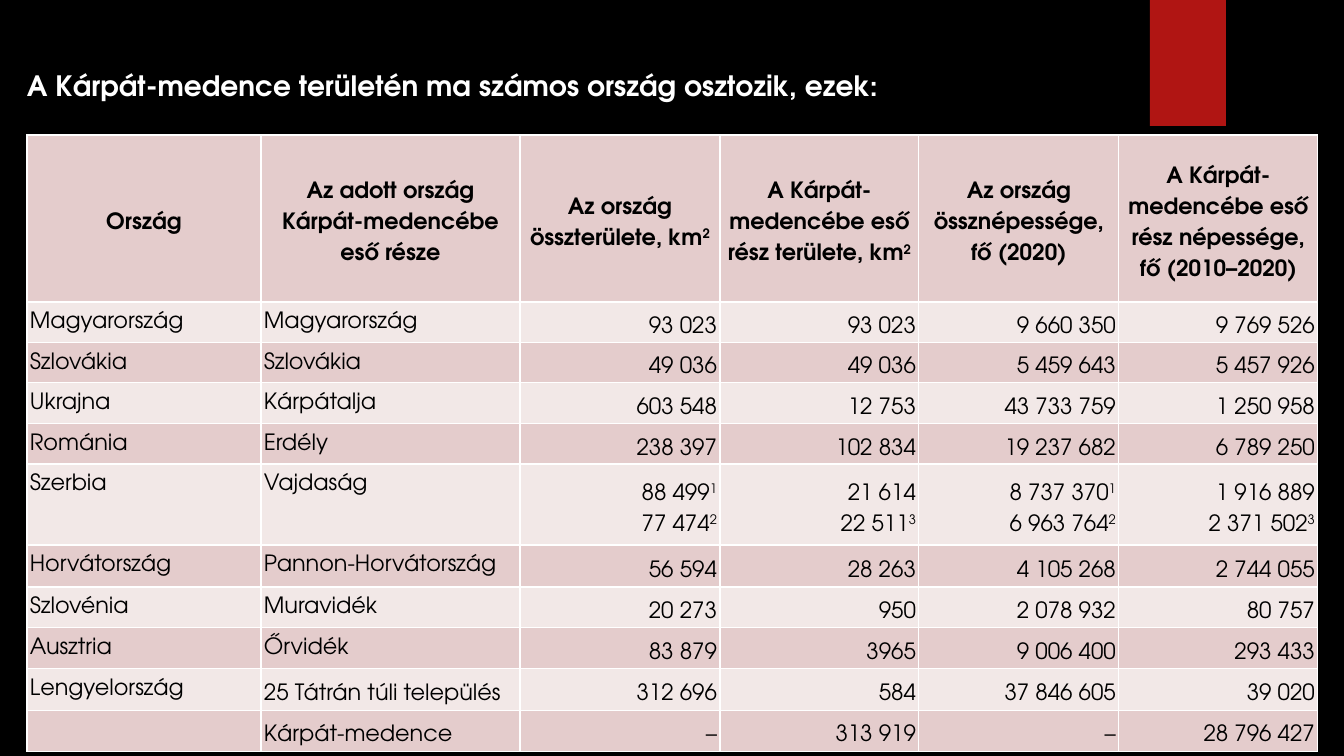
from lxml import etree
from pptx import Presentation
from pptx import util as u
from pptx.dml import color
from pptx.enum import shapes, text
from pptx.oxml import ns

WHITE, BLACK, RED = "FFFFFF", "000000", "B01513"
DARK_BAND, LIGHT_BAND = "E4CCCC", "F2E8E7"
PX = 12192000 / 1344

COLUMN_WIDTHS = [234, 259, 200, 199, 200, 199]
ROW_HEIGHTS = [167, 40, 40, 41, 40, 81, 42, 40, 41, 42, 41]

# "^" raises the rest of a line; a line break starts a new paragraph.
COUNTRIES = [
    ["Ország", "Az adott ország Kárpát-medencébe eső része",
     "Az ország összterülete, km^2",
     "A Kárpát-medencébe eső rész területe, km^2",
     "Az ország össznépessége, fő (2020)",
     "A Kárpát-medencébe eső rész népessége, fő (2010–2020)"],
    ["Magyarország", "Magyarország", "93 023", "93 023", "9 660 350", "9 769 526"],
    ["Szlovákia", "Szlovákia", "49 036", "49 036", "5 459 643", "5 457 926"],
    ["Ukrajna", "Kárpátalja", "603 548", "12 753", "43 733 759", "1 250 958"],
    ["Románia", "Erdély", "238 397", "102 834", "19 237 682", "6 789 250"],
    ["Szerbia", "Vajdaság", "88 499^1\n77 474^2", "21 614\n22 511^3",
     "8 737 370^1\n6 963 764^2", "1 916 889\n2 371 502^3"],
    ["Horvátország", "Pannon-Horvátország", "56 594", "28 263", "4 105 268", "2 744 055"],
    ["Szlovénia", "Muravidék", "20 273", "950", "2 078 932", "80 757"],
    ["Ausztria", "Őrvidék", "83 879", "3965", "9 006 400", "293 433"],
    ["Lengyelország", "25 Tátrán túli település", "312 696", "584", "37 846 605", "39 020"],
    ["", "Kárpát-medence", "–", "313 919", "–", "28 796 427"],
]


def px(length):
    return u.Emu(round(length * PX))


def rgb(value):
    return color.RGBColor.from_string(value)


def apply(target, values):
    for name, value in values.items():
        setattr(target, name, value)


def cell_format(row, column):
    """Return the alignment and anchor that a table position calls for."""
    align, anchor = text.PP_ALIGN, text.MSO_ANCHOR
    if row == 0:
        return align.CENTER, anchor.MIDDLE
    if column > 1:
        return align.RIGHT, anchor.MIDDLE
    if column == 1 and row >= len(COUNTRIES) - 2:
        return align.LEFT, anchor.MIDDLE
    return align.JUSTIFY, anchor.TOP


class SlidePainter:
    font_name = "TeX Gyre Adventor"

    def __init__(self, slide, background):
        self.slide = slide
        slide.background.fill.solid()
        slide.background.fill.fore_color.rgb = rgb(background)

    def style_font(self, font, size, ink, bold):
        apply(font, {"name": self.font_name, "size": u.Pt(size), "bold": bold})
        font.color.rgb = rgb(ink)

    def add_wording(self, frame, wording, size, ink, bold=False, **para_format):
        for index, line in enumerate(wording.split("\n")):
            para = frame.add_paragraph() if index else frame.paragraphs[0]
            apply(para, para_format)
            self.style_font(para.font, size, ink, bold)
            base, _, raised = line.partition("^")
            for part, baseline in ((base, "0"), (raised, "30000")):
                if part:
                    span = para.add_run()
                    span.text = part
                    self.style_font(span.font, size, ink, bold)
                    span._r.get_or_add_rPr().set("baseline", baseline)

    def rectangle(self, left, top, width, height, fill):
        shape = self.slide.shapes.add_shape(
            shapes.MSO_SHAPE.RECTANGLE, *map(px, (left, top, width, height)))
        shape.shadow.inherit = False
        shape.fill.solid()
        shape.fill.fore_color.rgb = rgb(fill)
        shape.line.fill.background()

    def title(self, left, top, width, height, wording):
        box = self.slide.shapes.add_textbox(*map(px, (left, top, width, height)))
        apply(box.text_frame, {"word_wrap": True,
                               "auto_size": text.MSO_AUTO_SIZE.SHAPE_TO_FIT_TEXT})
        self.add_wording(box.text_frame, wording, 20, WHITE, bold=True)

    def border(self, cell, ink, points):
        properties = cell._tc.get_or_add_tcPr()
        for side in ("lnL", "lnR", "lnT", "lnB"):
            line = etree.SubElement(properties, ns.qn(f"a:{side}"), w=str(u.Pt(points)))
            fill = etree.SubElement(line, ns.qn("a:solidFill"))
            etree.SubElement(fill, ns.qn("a:srgbClr"), val=ink)

    def table(self, left, top, widths, heights, rows):
        frame = self.slide.shapes.add_table(
            len(rows), len(widths),
            *map(px, (left, top, sum(widths), sum(heights))))
        grid = frame.table
        apply(grid, {"first_row": False, "horz_banding": False})
        for column, width in zip(grid.columns, widths):
            column.width = px(width)
        for row, height in zip(grid.rows, heights):
            row.height = px(height)
        for r, row in enumerate(rows):
            for c, wording in enumerate(row):
                cell = grid.cell(r, c)
                alignment, anchor = cell_format(r, c)
                apply(cell, {"margin_left": px(3), "margin_right": px(3),
                             "margin_top": 0, "margin_bottom": 0,
                             "vertical_anchor": anchor})
                self.border(cell, WHITE, 1)
                cell.fill.solid()
                cell.fill.fore_color.rgb = rgb(LIGHT_BAND if r % 2 else DARK_BAND)
                self.add_wording(cell.text_frame, wording, 16, BLACK, bold=r == 0,
                                 alignment=alignment, line_spacing=1.5)


def main():
    deck = Presentation()
    apply(deck, {"slide_width": px(1344), "slide_height": px(756)})
    painter = SlidePainter(deck.slides.add_slide(deck.slide_layouts[6]), BLACK)
    painter.rectangle(1150, 0, 76, 126, RED)
    painter.title(17, 64, 997, 44,
                  "A Kárpát-medence területén ma számos ország osztozik, ezek:")
    painter.table(27, 135, COLUMN_WIDTHS, ROW_HEIGHTS, COUNTRIES)
    deck.save("out.pptx")


if __name__ == "__main__":
    main()
